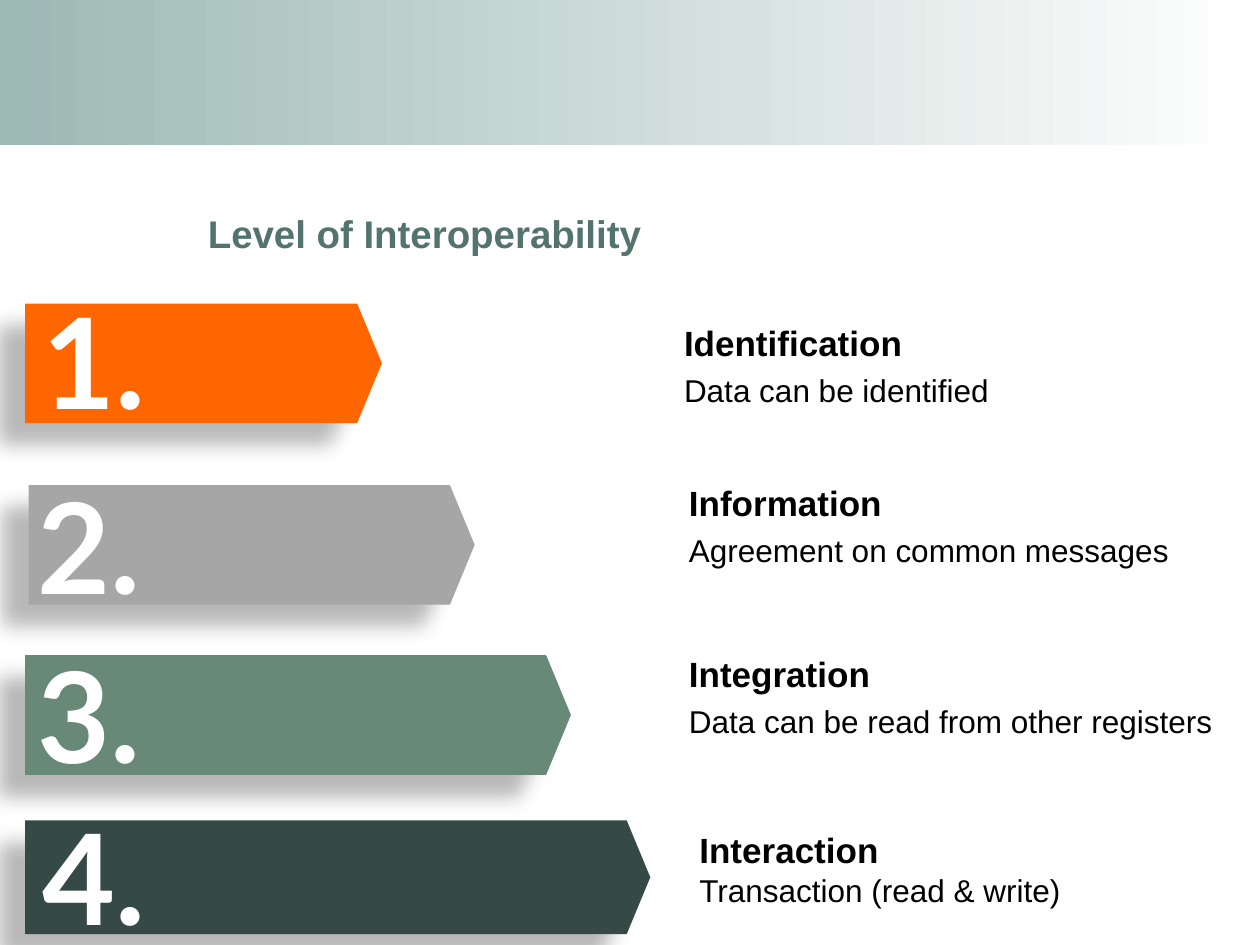
import pptx
import pptx.util
import pptx.dml.color
import pptx.enum.shapes
import pptx.enum.text
import pptx.oxml
from pptx.util import Cm

RGBColor = pptx.dml.color.RGBColor
MSO_SHAPE = pptx.enum.shapes.MSO_SHAPE
MSO_AUTO_SIZE = pptx.enum.text.MSO_AUTO_SIZE

MIST = RGBColor(0x9D, 0xB9, 0xB4)
WHITE = RGBColor(0xFF, 0xFF, 0xFF)
BLACK = RGBColor(0x00, 0x00, 0x00)
TEAL = RGBColor(0x53, 0x74, 0x6E)
ORANGE = RGBColor(0xFF, 0x66, 0x00)
GRAY = RGBColor(0xA6, 0xA6, 0xA6)
SAGE = RGBColor(0x68, 0x88, 0x78)
PINE = RGBColor(0x35, 0x4A, 0x46)

SHADOW = (
    '<a:effectLst xmlns:a="http://schemas.openxmlformats.org/drawingml/2006/main">'
    '<a:outerShdw blurRad="150000" dist="250000" dir="8460000" algn="ctr" rotWithShape="0">'
    '<a:srgbClr val="000000"><a:alpha val="28000"/></a:srgbClr>'
    '</a:outerShdw></a:effectLst>'
)


def format_run(run, name, size, color, bold):
    run.font.name = name
    run.font.size = pptx.util.Pt(size)
    run.font.color.rgb = color
    run.font.bold = bold


def clear_margins(text_frame):
    text_frame.margin_left = text_frame.margin_right = 0
    text_frame.margin_top = text_frame.margin_bottom = 0


presentation = pptx.Presentation()
presentation.slide_width = Cm(25.4)
presentation.slide_height = Cm(19.05)
slide = presentation.slides.add_slide(presentation.slide_layouts[5])

# Gradient band across the top
band = slide.shapes.add_shape(MSO_SHAPE.RECTANGLE, 0, 0, Cm(25.4), Cm(2.92))
band.shadow.inherit = False
band.line.fill.background()
band.fill.gradient()
band.fill.gradient_angle = 0
for stop, color, position in zip(band.fill.gradient_stops, (MIST, WHITE), (0, 1)):
    stop.color.rgb = color
    stop.position = position

# Title
title = slide.shapes.title
title.left, title.top, title.width, title.height = Cm(4.19), Cm(4.11), Cm(18.16), Cm(1.17)
title.text_frame.text = "Level of Interoperability"
title.text_frame.auto_size = MSO_AUTO_SIZE.NONE
title.text_frame.vertical_anchor = pptx.enum.text.MSO_ANCHOR.MIDDLE
clear_margins(title.text_frame)
title_paragraph = title.text_frame.paragraphs[0]
title_paragraph.alignment = pptx.enum.text.PP_ALIGN.LEFT
format_run(title_paragraph.runs[0], "Arial", 22, TEAL, True)

# Levels: arrow (left, top, width, height), color, number (left, top),
# caption (left, top, width, height), line spacing, heading, description
levels = [
    ((0.51, 6.12, 7.19, 2.41), ORANGE, (0.61, 5.59), (13.79, 6.32, 17.09, 1.85), 1.2,
     "Identification", "Data can be identified"),
    ((0.58, 9.78, 8.99, 2.41), GRAY, (0.51, 9.32), (13.89, 9.53, 14.0, 1.85), 1.2,
     "Information", "Agreement on common messages"),
    ((0.51, 13.21, 11.0, 2.41), SAGE, (0.51, 12.73), (13.89, 12.98, 14.0, 1.85), 1.2,
     "Integration", "Data can be read from other registers"),
    ((0.51, 16.54, 12.6, 2.29), PINE, (0.61, 16.0), (14.1, 16.71, 10.59, 1.63), 1.0,
     "Interaction", "Transaction (read & write)"),
]
for number, level in enumerate(levels, start=1):
    arrow_box, color, number_place, caption_box, spacing, heading, description = level

    # Arrow with a soft shadow
    arrow = slide.shapes.add_shape(MSO_SHAPE.PENTAGON, *map(Cm, arrow_box))
    arrow.adjustments[0] = 0.207
    arrow.fill.solid()
    arrow.fill.fore_color.rgb = color
    arrow.line.fill.background()
    arrow._element.spPr.append(pptx.oxml.parse_xml(SHADOW))

    # Large number
    number_box = slide.shapes.add_textbox(*map(Cm, number_place), Cm(2.87), Cm(3.33))
    number_box.text_frame.text = f"{number}."
    number_box.text_frame.word_wrap = False
    number_box.text_frame.auto_size = MSO_AUTO_SIZE.SHAPE_TO_FIT_TEXT
    format_run(number_box.text_frame.paragraphs[0].runs[0], "Lato", 72, WHITE, True)

    # Heading and description
    caption = slide.shapes.add_textbox(*map(Cm, caption_box))
    caption.text_frame.text = f"{heading}\v{description}"
    caption.text_frame.word_wrap = True
    caption.text_frame.auto_size = MSO_AUTO_SIZE.SHAPE_TO_FIT_TEXT
    clear_margins(caption.text_frame)
    paragraph = caption.text_frame.paragraphs[0]
    paragraph.line_spacing = spacing
    heading_run, description_run = paragraph.runs
    format_run(heading_run, "Arial", 20, BLACK, True)
    format_run(description_run, "Arial", 18, BLACK, False)

presentation.save("out.pptx")
